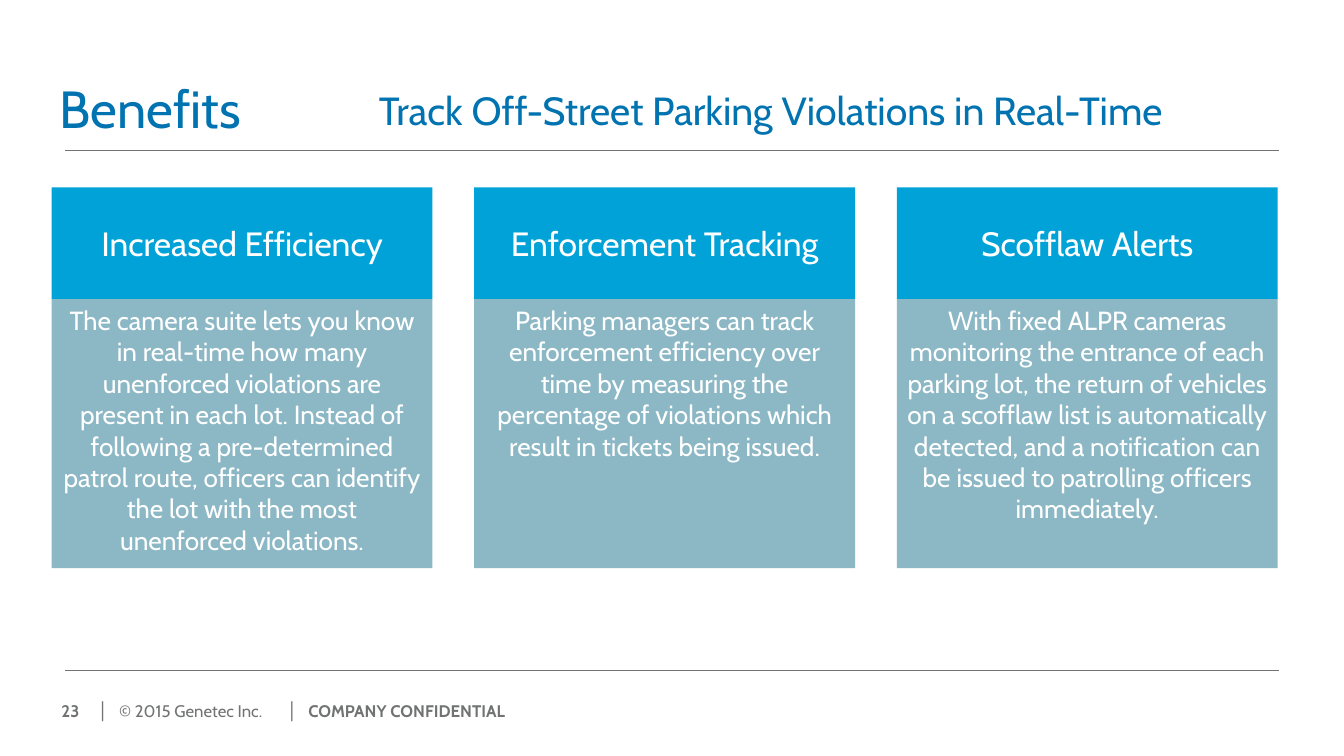
from dataclasses import dataclass

from lxml import etree
from pptx import Presentation
from pptx.dml.color import RGBColor
from pptx.enum.shapes import MSO_CONNECTOR, MSO_SHAPE
from pptx.enum.text import MSO_ANCHOR, MSO_AUTO_SIZE, PP_ALIGN
from pptx.oxml.ns import qn
from pptx.shapes.autoshape import Shape
from pptx.slide import Slide
from pptx.util import Cm, Pt

STRAIGHT = MSO_CONNECTOR.STRAIGHT
RECTANGLE = MSO_SHAPE.RECTANGLE
TOP, MIDDLE, BOTTOM = MSO_ANCHOR.TOP, MSO_ANCHOR.MIDDLE, MSO_ANCHOR.BOTTOM
NO_AUTOFIT = MSO_AUTO_SIZE.NONE
LEFT, CENTER = PP_ALIGN.LEFT, PP_ALIGN.CENTER

FONT = "Cabin"
BLUE, GRAY, WHITE = "0073B0", "717272", "FFFFFF"
HEADER_FILL, BODY_FILL = "00A2D8", "8CB8C6"

CARD_LEFT, CARD_STEP, CARD_WIDTH = 1.3, 10.65, 9.6
HEADER_TOP, HEADER_HEIGHT, BODY_HEIGHT = 4.72, 2.82, 6.78
RULE_LEFT, RULE_RIGHT = 1.65, 32.23
FOOTER_TOP, FOOTER_HEIGHT, FOOTER_TAB = 17.4, 1.02, 0.54


@dataclass(frozen=True)
class Area:
    left: float
    top: float
    width: float
    height: float

    def lengths(self) -> tuple[Cm, Cm, Cm, Cm]:
        return Cm(self.left), Cm(self.top), Cm(self.width), Cm(self.height)


@dataclass(frozen=True)
class TextStyle:
    size: float
    color: str
    anchor: MSO_ANCHOR = TOP
    alignment: PP_ALIGN = LEFT
    line_spacing: float = 1.0


@dataclass(frozen=True)
class Card:
    heading: str
    description: str


@dataclass(frozen=True)
class FooterItem:
    left: float
    width: float
    pieces: tuple[tuple[str, bool], ...]


TITLE_STYLE = TextStyle(37.3, BLUE, BOTTOM, line_spacing=0.9)
SUBTITLE_STYLE = TextStyle(28, BLUE)
HEADING_STYLE = TextStyle(24, WHITE, MIDDLE, CENTER)
DESCRIPTION_STYLE = TextStyle(18.7, WHITE, TOP, CENTER)
FOOTER_STYLE = TextStyle(12, GRAY, MIDDLE)

CARDS = (
    Card(
        "Increased Efficiency",
        "The camera suite lets you know in real-time how many unenforced "
        "violations are present in each lot. Instead of following a "
        "pre-determined patrol route, officers can identify the lot with "
        "the most unenforced violations.",
    ),
    Card(
        "Enforcement Tracking",
        "Parking managers can track enforcement efficiency over time by "
        "measuring the percentage of violations which result in tickets "
        "being issued.",
    ),
    Card(
        "Scofflaw Alerts",
        "With fixed ALPR cameras monitoring the entrance of each parking "
        "lot, the return of vehicles on a scofflaw list is automatically "
        "detected, and a notification can be issued to patrolling officers "
        "immediately.",
    ),
)

FOOTER_ITEMS = (
    FooterItem(2.21, 5.56, (("│\t", True), ("© 2015 Genetec Inc.", False))),
    FooterItem(6.98, 7.87, (("│\tCOMPANY CONFIDENTIAL", True),)),
    FooterItem(1.3, 1.63, (("23", True),)),
)


def color(value: str) -> RGBColor:
    return RGBColor.from_string(value)


def apply_format(target: object, values: dict[str, object]) -> None:
    for name, value in values.items():
        setattr(target, name, value)


def write_text(shape: Shape, pieces: tuple[tuple[str, bool], ...], style: TextStyle) -> None:
    frame = shape.text_frame
    apply_format(frame, {
        "word_wrap": True,
        "auto_size": NO_AUTOFIT,
        "vertical_anchor": style.anchor,
    })
    paragraph = frame.paragraphs[0]
    apply_format(paragraph, {
        "alignment": style.alignment,
        "line_spacing": style.line_spacing,
    })
    for text, bold in pieces:
        run = paragraph.add_run()
        run.text = text
        apply_format(run.font, {"name": FONT, "size": Pt(style.size), "bold": bold})
        run.font.color.rgb = color(style.color)


def add_rule(slide: Slide, y: float) -> None:
    rule = slide.shapes.add_connector(
        STRAIGHT, Cm(RULE_LEFT), Cm(y), Cm(RULE_RIGHT), Cm(y)
    )
    rule.line.color.rgb = color(GRAY)
    rule.line.width = Pt(0.5)
    etree.SubElement(rule.element.spPr, qn("a:effectLst"))


def add_title(slide: Slide) -> None:
    title = slide.shapes.title
    title.left, title.top, title.width, title.height = Area(1.25, 0.69, 5.49, 2.95).lengths()
    write_text(title, (("Benefits", False),), TITLE_STYLE)


def add_subtitle(slide: Slide) -> None:
    subtitle = slide.shapes.add_textbox(*Area(9.3, 2.06, 20.42, 1.45).lengths())
    text = "Track Off-Street Parking Violations in Real-Time"
    write_text(subtitle, ((text, False),), SUBTITLE_STYLE)


def add_block(slide: Slide, area: Area, fill: str, text: str, style: TextStyle) -> None:
    block = slide.shapes.add_shape(RECTANGLE, *area.lengths())
    block.shadow.inherit = False
    block.fill.solid()
    block.fill.fore_color.rgb = color(fill)
    block.line.fill.background()
    write_text(block, ((text, False),), style)


def add_card(slide: Slide, index: int, card: Card) -> None:
    left = CARD_LEFT + index * CARD_STEP
    header = Area(left, HEADER_TOP, CARD_WIDTH, HEADER_HEIGHT)
    body = Area(left, HEADER_TOP + HEADER_HEIGHT, CARD_WIDTH, BODY_HEIGHT)
    add_block(slide, header, HEADER_FILL, card.heading, HEADING_STYLE)
    add_block(slide, body, BODY_FILL, card.description, DESCRIPTION_STYLE)


def add_footer_item(slide: Slide, item: FooterItem) -> None:
    area = Area(item.left, FOOTER_TOP, item.width, FOOTER_HEIGHT)
    box = slide.shapes.add_textbox(*area.lengths())
    write_text(box, item.pieces, FOOTER_STYLE)
    properties = box.text_frame.paragraphs[0]._p.get_or_add_pPr()
    tabs = etree.SubElement(properties, qn("a:tabLst"))
    etree.SubElement(tabs, qn("a:tab"), pos=str(int(Cm(FOOTER_TAB))), algn="l")


def main() -> None:
    presentation = Presentation()
    presentation.slide_width = Cm(33.87)
    presentation.slide_height = Cm(19.05)
    slide = presentation.slides.add_slide(presentation.slide_layouts[5])
    for y in (3.8, 16.88):
        add_rule(slide, y)
    add_title(slide)
    for item in FOOTER_ITEMS:
        add_footer_item(slide, item)
    for index, card in enumerate(CARDS):
        add_card(slide, index, card)
    add_subtitle(slide)
    presentation.save("out.pptx")


if __name__ == "__main__":
    main()
